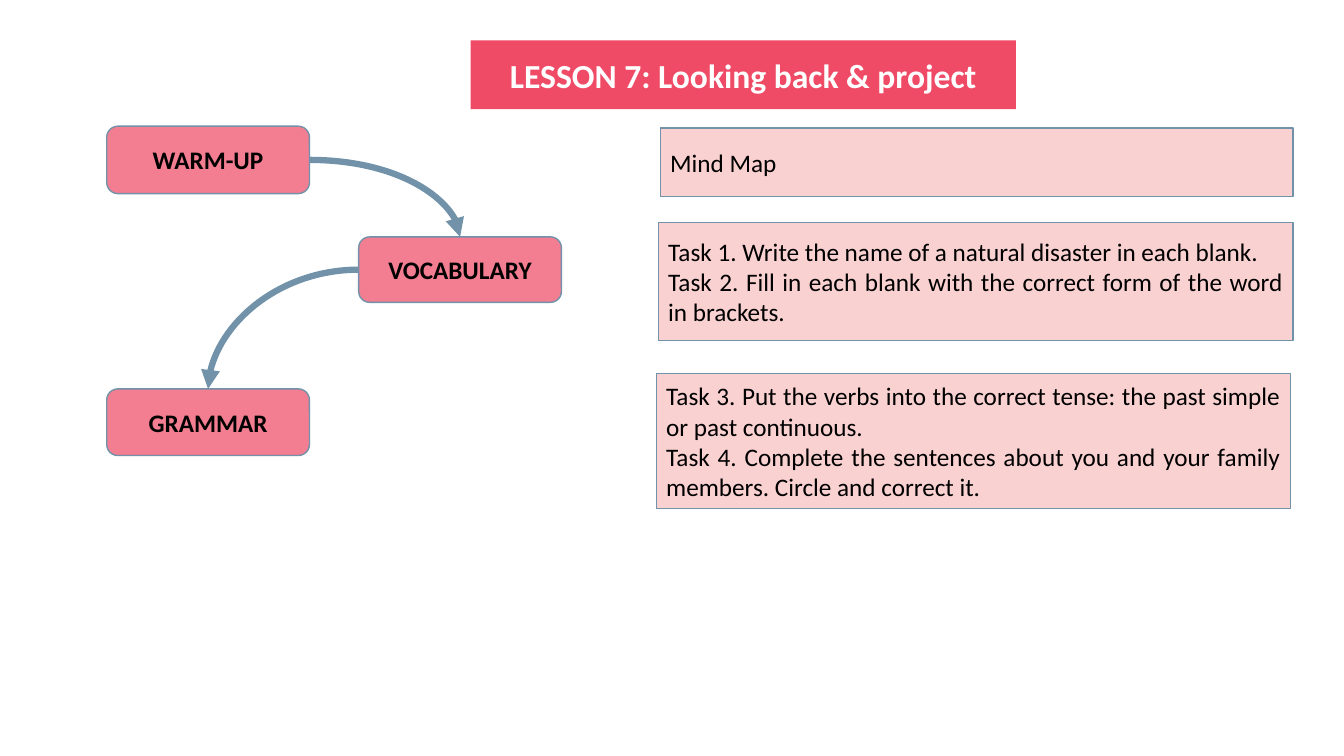
"""Build the lesson overview slide: three linked stages and their tasks."""
from lxml.etree import SubElement
from pptx import Presentation
from pptx.dml.color import RGBColor
from pptx.enum.shapes import MSO_CONNECTOR, MSO_SHAPE
from pptx.enum.text import MSO_ANCHOR, MSO_AUTO_SIZE, PP_ALIGN
from pptx.oxml.ns import qn
from pptx.util import Cm, Pt

HEADING = "LESSON 7: Looking back & project"
STAGES = [
    ("WARM-UP", (2.69, 3.18, 5.11, 1.7)),
    ("VOCABULARY", (9.04, 5.97, 5.11, 1.65)),
    ("GRAMMAR", (2.69, 9.8, 5.11, 1.68)),
]
TASKS = [
    (["Mind Map"], PP_ALIGN.LEFT, (16.64, 3.23, 15.95, 1.73)),
    (["Task 1. Write the name of a natural disaster in each blank.",
      "Task 2. Fill in each blank with the correct form of the word in brackets."],
     PP_ALIGN.JUSTIFY, (16.59, 5.61, 16, 2.97)),
    (["Task 3. Put the verbs into the correct tense: the past simple or past continuous.",
      "Task 4. Complete the sentences about you and your family members. Circle and correct it."],
     PP_ALIGN.JUSTIFY, (16.54, 9.42, 15.98, 3.4)),
]
HEADING_BOX = (11.86, 1.02, 13.74, 1.73)
RIGHT_SIDE, LEFT_SIDE, TOP_SIDE = 3, 1, 0

CRIMSON = RGBColor(0xEF, 0x4B, 0x66)
ROSE = RGBColor(0xF3, 0x7D, 0x91)
BLUSH = RGBColor(0xF7, 0xA5, 0xA5)
STEEL = RGBColor(0x71, 0x92, 0xA9)
BLACK = RGBColor(0, 0, 0)
WHITE = RGBColor(0xFF, 0xFF, 0xFF)


def write(shape, lines, align, size=18, color=BLACK, bold=False):
    frame = shape.text_frame
    frame.word_wrap = True
    frame.auto_size = MSO_AUTO_SIZE.NONE
    frame.vertical_anchor = MSO_ANCHOR.MIDDLE
    for index, line in enumerate(lines):
        paragraph = frame.add_paragraph() if index else frame.paragraphs[0]
        paragraph.alignment = align
        run = paragraph.add_run()
        run.text = line
        run.font.name = "Calibri"
        run.font.size = Pt(size)
        run.font.bold = bold
        run.font.color.rgb = color


def add_box(slide, kind, box, fill):
    shape = slide.shapes.add_shape(kind, *map(Cm, box))
    shape.shadow.inherit = False
    shape.fill.solid()
    shape.fill.fore_color.rgb = fill
    shape.line.color.rgb = STEEL
    shape.line.width = Pt(1)
    return shape


def add_heading(slide):
    heading = slide.shapes.title
    heading.left, heading.top, heading.width, heading.height = map(Cm, HEADING_BOX)
    properties = heading.element.spPr
    geometry = SubElement(properties, qn("a:prstGeom"), prst="roundRect")
    adjustments = SubElement(geometry, qn("a:avLst"))
    SubElement(adjustments, qn("a:gd"), name="adj", fmla="val 42700")
    heading.fill.solid()
    heading.fill.fore_color.rgb = CRIMSON
    write(heading, [HEADING], PP_ALIGN.CENTER, 24, WHITE, True)


def add_arrow(slide, source, target):
    arrow = slide.shapes.add_connector(MSO_CONNECTOR.CURVE, 0, 0, 0, 0)
    side = RIGHT_SIDE if target.left > source.left else LEFT_SIDE
    arrow.begin_connect(source, side)
    arrow.end_connect(target, TOP_SIDE)
    arrow.line.color.rgb = STEEL
    arrow.line.width = Pt(4.5)
    properties = arrow.element.spPr
    properties.find(qn("a:prstGeom")).set("prst", "curvedConnector2")
    SubElement(properties.find(qn("a:ln")), qn("a:tailEnd"), type="triangle")
    SubElement(properties, qn("a:effectLst"))


def main():
    deck = Presentation()
    deck.slide_width, deck.slide_height = Cm(33.87), Cm(19.05)
    slide = deck.slides.add_slide(deck.slide_layouts[5])
    add_heading(slide)

    for lines, align, box in TASKS:
        panel = add_box(slide, MSO_SHAPE.RECTANGLE, box, BLUSH)
        tint = panel.element.spPr.find(qn("a:solidFill")).find(qn("a:srgbClr"))
        SubElement(tint, qn("a:alpha"), val="50000")
        write(panel, lines, align)

    stages = []
    for label, box in STAGES:
        stage = add_box(slide, MSO_SHAPE.ROUNDED_RECTANGLE, box, ROSE)
        write(stage, [label], PP_ALIGN.CENTER, bold=True)
        stages.append(stage)
    for source, target in zip(stages, stages[1:]):
        add_arrow(slide, source, target)

    deck.save("out.pptx")


if __name__ == "__main__":
    main()
